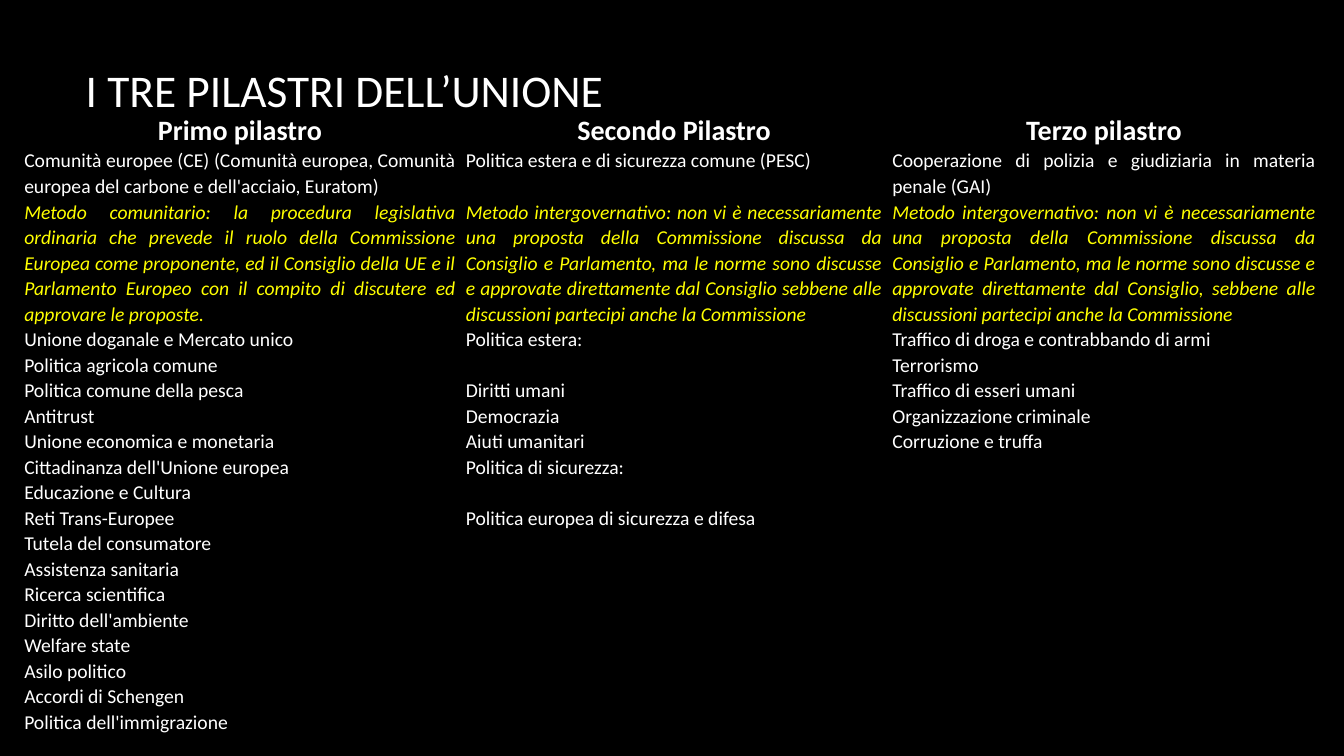
from lxml.etree import SubElement
from pptx import Presentation
from pptx.dml.color import RGBColor
from pptx.enum.text import MSO_ANCHOR, MSO_AUTO_SIZE, PP_ALIGN
from pptx.oxml.ns import qn
from pptx.util import Inches, Pt

COLORS = {"background": "000000", "text": "FFFFFF", "method": "FFFF00"}
FONT = "Calibri"
SLIDE_WIDTH, SLIDE_HEIGHT = Inches(13.33), Inches(7.5)
COLUMN_SHARES = [32.86, 31.73, 32.26]
ROW_SHARES = [3.87, 6.27, 12.8, 41.07]
LINE_GAP = Pt(18.25)


def across(percent):
    return round(SLIDE_WIDTH * percent / 100)


def down(percent):
    return round(SLIDE_HEIGHT * percent / 100)


pillars = [
    (
        "Primo pilastro",
        "Comunità europee (CE) (Comunità europea, Comunità europea del carbone e dell'acciaio, Euratom)",
        "Metodo comunitario: la procedura legislativa ordinaria che prevede il ruolo della "
        "Commissione Europea come proponente, ed il Consiglio della UE e il Parlamento Europeo "
        "con il compito di discutere ed approvare le proposte.",
        [
            "Unione doganale e Mercato unico",
            "Politica agricola comune",
            "Politica comune della pesca",
            "Antitrust",
            "Unione economica e monetaria",
            "Cittadinanza dell'Unione europea",
            "Educazione e Cultura",
            "Reti Trans-Europee",
            "Tutela del consumatore",
            "Assistenza sanitaria",
            "Ricerca scientifica",
            "Diritto dell'ambiente",
            "Welfare state",
            "Asilo politico",
            "Accordi di Schengen",
            "Politica dell'immigrazione",
        ],
    ),
    (
        "Secondo Pilastro",
        "Politica estera e di sicurezza comune (PESC)",
        "Metodo intergovernativo: non vi è necessariamente una proposta della Commissione "
        "discussa da Consiglio e Parlamento, ma le norme sono discusse e approvate direttamente "
        "dal Consiglio sebbene alle discussioni partecipi anche la Commissione",
        [
            "Politica estera:",
            "Diritti umani",
            "Democrazia",
            "Aiuti umanitari",
            "Politica di sicurezza:",
            "Politica europea di sicurezza e difesa",
        ],
    ),
    (
        "Terzo pilastro",
        "Cooperazione di polizia e giudiziaria in materia penale (GAI)",
        "Metodo intergovernativo: non vi è necessariamente una proposta della Commissione "
        "discussa da Consiglio e Parlamento, ma le norme sono discusse e approvate direttamente "
        "dal Consiglio, sebbene alle discussioni partecipi anche la Commissione",
        [
            "Traffico di droga e contrabbando di armi",
            "Terrorismo",
            "Traffico di esseri umani",
            "Organizzazione criminale",
            "Corruzione e truffa",
        ],
    ),
]

presentation = Presentation()
presentation.slide_width, presentation.slide_height = SLIDE_WIDTH, SLIDE_HEIGHT
slide = presentation.slides.add_slide(presentation.slide_layouts[5])
slide.background.fill.solid()
slide.background.fill.fore_color.rgb = RGBColor.from_string(COLORS["background"])

heading = slide.shapes.title
heading.left, heading.top = across(5.63), down(8.93)
heading.width, heading.height = across(83.12), down(5.87)
heading.text_frame.auto_size = MSO_AUTO_SIZE.NONE
heading.text_frame.vertical_anchor = MSO_ANCHOR.MIDDLE
heading_line = heading.text_frame.paragraphs[0]
heading_line.alignment = PP_ALIGN.LEFT
heading_run = heading_line.add_run()
heading_run.text = "I TRE PILASTRI DELL’UNIONE"
heading_run.font.name = FONT
heading_run.font.size = Pt(32.4)
heading_run.font.color.rgb = RGBColor.from_string(COLORS["text"])

pillar_frame = slide.shapes.add_table(
    len(ROW_SHARES), len(pillars), across(1.43), down(14.67), across(96.85), down(81.33)
)
pillar_table = pillar_frame.table
pillar_table.first_row = False
pillar_table.horz_banding = False
for column, share in zip(pillar_table.columns, COLUMN_SHARES):
    column.width = across(share)
for row, share in zip(pillar_table.rows, ROW_SHARES):
    row.height = down(share)
pillar_frame.height = down(81.33)

for column_index, (name, scope, method, areas) in enumerate(pillars):
    for row_index, lines in enumerate([[name], [scope], [method], areas]):
        is_name, is_method = row_index == 0, row_index == 2
        cell = pillar_table.cell(row_index, column_index)
        cell.margin_left = cell.margin_right = Inches(0.05)
        cell.margin_top = cell.margin_bottom = 0
        cell_properties = cell._tc.get_or_add_tcPr()
        for side in ("a:lnL", "a:lnR", "a:lnT", "a:lnB"):
            border = SubElement(cell_properties, qn(side), w=str(Pt(1)))
            border_fill = SubElement(border, qn("a:solidFill"))
            SubElement(border_fill, qn("a:srgbClr"), val=COLORS["background"])
        cell.fill.background()

        for line_index, line in enumerate(lines):
            frame = cell.text_frame
            paragraph = frame.add_paragraph() if line_index else frame.paragraphs[0]
            paragraph.alignment = PP_ALIGN.CENTER if is_name else PP_ALIGN.JUSTIFY
            paragraph.line_spacing = 1.07
            if line.endswith(":"):
                paragraph.space_after = LINE_GAP
            run = paragraph.add_run()
            run.text = line
            run.font.name = FONT
            run.font.size = Pt(20 if is_name else 14)
            run.font.bold = is_name
            run.font.italic = is_method
            run.font.color.rgb = RGBColor.from_string(COLORS["method" if is_method else "text"])

presentation.save("out.pptx")
